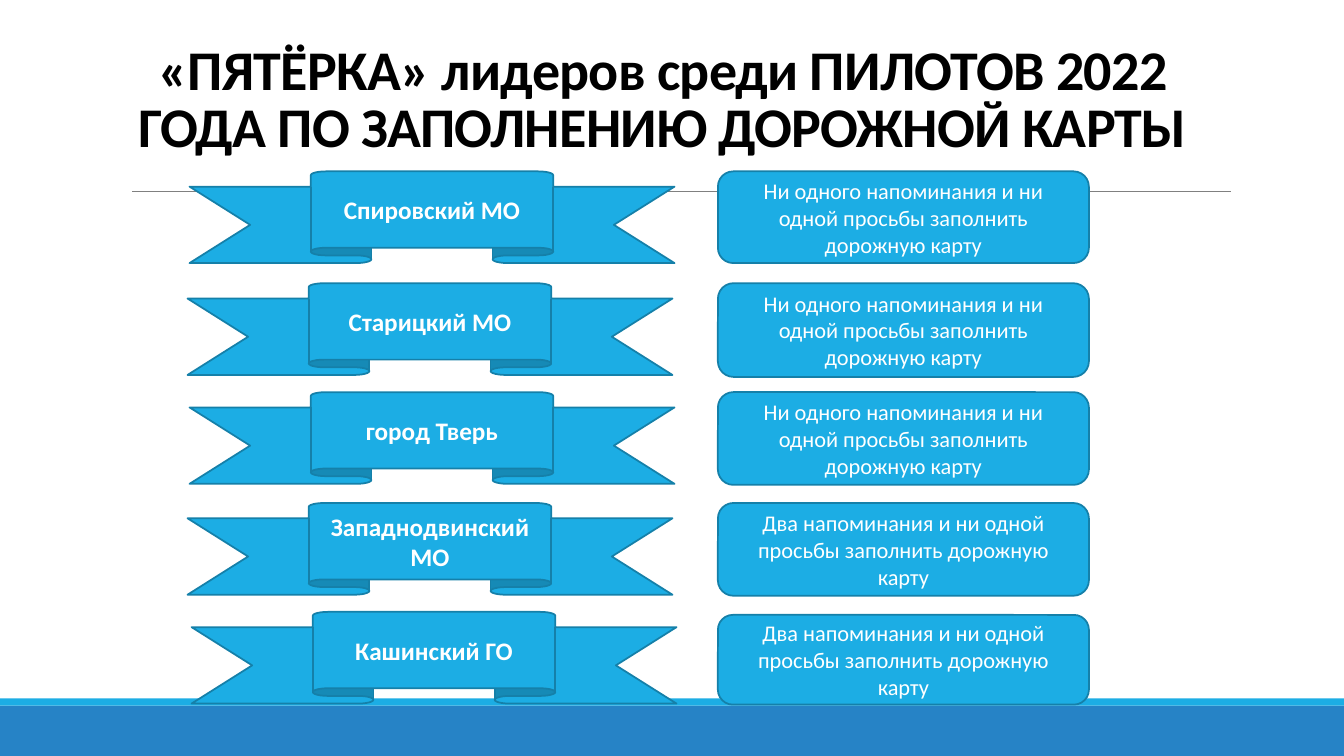
import dataclasses

import pptx
import pptx.dml.color
import pptx.enum.shapes
import pptx.enum.text
import pptx.oxml
import pptx.oxml.ns
import pptx.util

Inches = pptx.util.Inches
Pt = pptx.util.Pt
SHAPE = pptx.enum.shapes.MSO_SHAPE
ANCHOR = pptx.enum.text.MSO_ANCHOR

COLORS = {"sky": "1CADE4", "blue": "2683C6", "edge": "1580A9",
          "rule": "808080", "white": "FFFFFF", "black": "000000"}
NO_REMINDERS = "Ни одного напоминания и ни одной просьбы заполнить дорожную карту"
TWO_REMINDERS = "Два напоминания и ни одной просьбы заполнить дорожную карту"


@dataclasses.dataclass
class Leader:
    """A municipality's ribbon and the note beside it."""
    name: str
    note: str
    left: float
    top: float
    note_top: float
    note_height: float


LEADERS = [
    Leader("Спировский МО", NO_REMINDERS, 1.88, 1.7, 1.7, 0.91),
    Leader("Старицкий МО", NO_REMINDERS, 1.86, 2.81, 2.81, 0.93),
    Leader("город Тверь", NO_REMINDERS, 1.88, 3.89, 3.89, 0.92),
    Leader("Западнодвинский МО", TWO_REMINDERS, 1.86, 4.99, 4.99, 0.92),
    Leader("Кашинский ГО", TWO_REMINDERS, 1.9, 6.07, 6.1, 0.89),
]


def rgb(name: str) -> pptx.dml.color.RGBColor:
    """Return the palette colour of that name."""
    return pptx.dml.color.RGBColor.from_string(COLORS[name])


def write(sp, text: str, *, size: float, color: str = "white", bold: bool = False,
          anchor=ANCHOR.MIDDLE, line_spacing: float | None = None,
          tracking: float | None = None) -> None:
    """Put centred, formatted text into a shape."""
    tf = sp.text_frame
    tf.word_wrap = True
    tf.auto_size = pptx.enum.text.MSO_AUTO_SIZE.NONE
    tf.vertical_anchor = anchor
    p = tf.paragraphs[0]
    p.alignment = pptx.enum.text.PP_ALIGN.CENTER
    if line_spacing is not None:
        p.line_spacing = line_spacing
    r = p.add_run()
    r.text = text
    r.font.name = "Calibri"
    r.font.size = Pt(size)
    r.font.bold = bold
    r.font.color.rgb = rgb(color)
    if tracking is not None:
        r.font._element.set("spc", str(round(tracking * 100)))


def add_box(s, kind, left: float, top: float, width: float, height: float,
            fill: str = "sky", edge: str | None = "edge"):
    """Add a filled preset shape, outlined if an edge colour is given."""
    sp = s.shapes.add_shape(kind, Inches(left), Inches(top), Inches(width), Inches(height))
    sp.shadow.inherit = False
    sp.fill.solid()
    sp.fill.fore_color.rgb = rgb(fill)
    if edge is None:
        sp.line.fill.background()
    else:
        sp.line.color.rgb = rgb(edge)
        sp.line.width = Pt(1.25)
    return sp


def add_backdrop(s) -> None:
    """Add the bottom bands and the rule under the title."""
    add_box(s, SHAPE.RECTANGLE, 0, 7, 13.33, 0.5, "blue", None)
    add_box(s, SHAPE.RECTANGLE, 0, 6.93, 13.33, 0.07, "sky", None)
    rule = s.shapes.add_connector(pptx.enum.shapes.MSO_CONNECTOR.STRAIGHT,
                                  Inches(1.31), Inches(1.9), Inches(12.21), Inches(1.9))
    rule.line.color.rgb = rgb("rule")
    rule.line.width = Pt(0.5)
    rule._element.spPr.append(pptx.oxml.parse_xml(
        f"<a:effectLst {pptx.oxml.ns.nsdecls('a')}/>"))


def add_title(s, text: str) -> None:
    """Place and fill the title placeholder."""
    sp = s.shapes.title
    sp.left, sp.top, sp.width, sp.height = map(Inches, (1.07, 0.19, 11, 1.44))
    write(sp, text, size=40, color="black", bold=True, anchor=ANCHOR.BOTTOM,
          line_spacing=0.85, tracking=-0.5)


def add_leader(s, leader: Leader) -> None:
    """Add one ribbon with its note."""
    ribbon = add_box(s, SHAPE.UP_RIBBON, leader.left, leader.top, 4.81, 0.91)
    write(ribbon, leader.name, size=18, bold=True)
    note = add_box(s, SHAPE.ROUNDED_RECTANGLE, 7.12, leader.note_top, 3.68, leader.note_height)
    write(note, leader.note, size=16)


def main() -> None:
    """Build and save the slide."""
    prs = pptx.Presentation()
    prs.slide_width, prs.slide_height = Inches(13.33), Inches(7.5)
    s = prs.slides.add_slide(prs.slide_layouts[5])
    add_backdrop(s)
    add_title(s, "«ПЯТЁРКА» лидеров среди ПИЛОТОВ 2022 ГОДА ПО ЗАПОЛНЕНИЮ ДОРОЖНОЙ КАРТЫ")
    for leader in LEADERS:
        add_leader(s, leader)
    prs.save("out.pptx")


if __name__ == "__main__":
    main()
